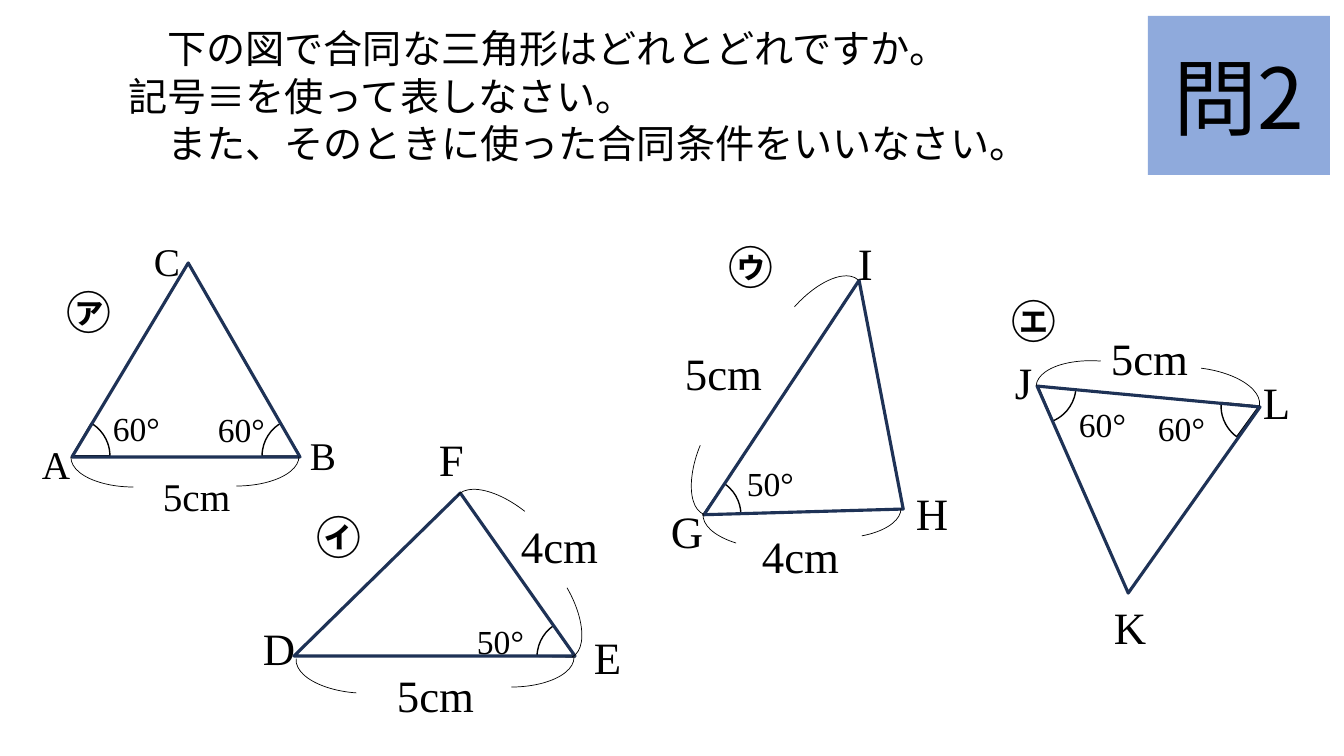
from lxml import etree
from pptx import Presentation
from pptx.dml.color import RGBColor
from pptx.enum.shapes import MSO_SHAPE
from pptx.enum.text import MSO_ANCHOR, MSO_AUTO_SIZE, PP_ALIGN
from pptx.oxml.ns import qn
from pptx.util import Emu, Pt

RECTANGLE = MSO_SHAPE.RECTANGLE
TRIANGLE = MSO_SHAPE.ISOSCELES_TRIANGLE
ARC = MSO_SHAPE.ARC
PIE = MSO_SHAPE.PIE
MIDDLE = MSO_ANCHOR.MIDDLE
LEFT = PP_ALIGN.LEFT
CENTER = PP_ALIGN.CENTER
FIT_TEXT = MSO_AUTO_SIZE.SHAPE_TO_FIT_TEXT

COLORS = {"text": "000000", "badge": "8FAADC", "side": "1E3256", "paper": "FFFFFF"}
SERIF = "Times New Roman"
GOTHIC = "Noto Sans CJK JP"
EMU_PER_PX = 914400 / 100.8
ANGLE_RADIUS = 38
LABEL_HEIGHTS = {24: 50, 28: 57, 32: 65}
FIRST_QUARTER = (180, 270.6)
SECOND_QUARTER = (270, 360)

QUESTION = [
    "　下の図で合同な三角形はどれとどれですか。",
    "記号≡を使って表しなさい。",
    "　また、そのときに使った合同条件をいいなさい。　",
]

FIGURES = [
    {
        "triangle": (294, 493, 281, 163, 0, 0.592),
        "angles": [(575, 657, 220, 321.1, 15.2)],
        "arcs": [
            (477, 472, 308.4, SECOND_QUARTER),
            (512, 540, 150, FIRST_QUARTER),
            (329, 601, 273.9, FIRST_QUARTER),
            (482, 595, 90, SECOND_QUARTER),
        ],
        "labels": [
            ("4cm", 511, 514, 118, 32), ("5cm", 387, 663, 118, 32),
            ("50°", 467, 616, 89, 24), ("D", 253, 616, 28, 32),
            ("E", 584, 625, 28, 32), ("F", 429, 427, 28, 32),
        ],
    },
    {
        "triangle": (709, 361, 281, 163, 123.5, 0.592),
        "angles": [(703, 515, 344.8, 319.8, 13.3)],
        "arcs": [
            (698, 394, 202.4, SECOND_QUARTER),
            (787, 264, 41.6, FIRST_QUARTER),
            (736, 456, 273.9, (226.2, 270.6)),
            (809, 446, 90, (270, 319.6)),
        ],
        "labels": [
            ("4cm", 752, 524, 118, 32), ("5cm", 675, 341, 118, 32),
            ("50°", 737, 458, 80, 24), ("I", 848, 231, 28, 32),
            ("G", 661, 499, 28, 32), ("H", 906, 481, 28, 32),
        ],
    },
    {
        "triangle": (72, 263, 228, 194, 0, 0.51),
        "angles": [(300, 456, 220, 320, 19.3), (72, 456, 340.5, 320, 19.3)],
        "arcs": [
            (104, 395, 270, FIRST_QUARTER),
            (207, 394, 90, SECOND_QUARTER),
        ],
        "labels": [
            ("A", 32, 435, 35, 28), ("B", 300, 426, 35, 28),
            ("C", 144, 232, 35, 28), ("5cm", 153, 467, 119, 28),
            ("60°", 103, 403, 85, 24), ("60°", 208, 404, 85, 24),
        ],
    },
    {
        "triangle": (1001, 347, 228, 194, 305.3, 0.51),
        "angles": [(1038, 386, 47.6, 318, 19.3), (1259, 406, 166, 320, 19.3)],
        "arcs": [
            (1069, 328, 274.4, SECOND_QUARTER),
            (1168, 335, 97, FIRST_QUARTER),
        ],
        "labels": [
            ("L", 1253, 370, 35, 32), ("K", 1104, 595, 35, 32),
            ("J", 1005, 350, 35, 32), ("5cm", 1101, 326, 119, 32),
            ("60°", 1069, 399, 83, 24), ("60°", 1148, 403, 78, 24),
        ],
    },
]

FIGURE_MARKS = [("㋐", 57, 280), ("㋑", 307, 505), ("㋒", 719, 235), ("㋓", 1002, 289)]


def px(*lengths):
    return [Emu(round(length * EMU_PER_PX)) for length in lengths]


def color(name):
    return RGBColor.from_string(COLORS[name])


def set_font(paragraph, size, name=SERIF, bold=False):
    font = paragraph.font
    font.size = Pt(size)
    font.bold = bold
    font.color.rgb = color("text")
    font.name = name
    properties = paragraph._p.pPr.find(qn("a:defRPr"))
    east_asian = etree.SubElement(properties, qn("a:ea"))
    east_asian.set("typeface", GOTHIC)


def add_outline(shapes, kind, box, rotation=0, fill=None, line=None, width=1):
    shape = shapes.add_shape(kind, *px(*box))
    shape.shadow.inherit = False
    shape.rotation = rotation
    if fill:
        shape.fill.solid()
        shape.fill.fore_color.rgb = color(fill)
    else:
        shape.fill.background()
    if line:
        shape.line.color.rgb = color(line)
        shape.line.width = Pt(width)
    else:
        shape.line.fill.background()
    return shape


def set_sweep(shape, start, end):
    for index, degrees in enumerate((start, end % 360)):
        shape.adjustments[index] = degrees * 0.6


def add_label(shapes, text, left, top, width, size, name=SERIF, bold=False):
    box = shapes.add_textbox(*px(left, top, width, LABEL_HEIGHTS[size]))
    frame = box.text_frame
    frame.word_wrap = True
    frame.auto_size = FIT_TEXT
    frame.text = text
    set_font(frame.paragraphs[0], size, name, bold)


def add_figure(slide, figure):
    shapes = slide.shapes.add_group_shape().shapes
    for x, y, rotation, start, end in figure["angles"]:
        box = (x - ANGLE_RADIUS, y - ANGLE_RADIUS, 2 * ANGLE_RADIUS, 2 * ANGLE_RADIUS)
        set_sweep(add_outline(shapes, PIE, box, rotation, "paper", "text"), start, end)
    *box, rotation, apex = figure["triangle"]
    triangle = add_outline(shapes, TRIANGLE, box, rotation, None, "side", 2.25)
    triangle.adjustments[0] = apex
    for left, top, rotation, sweep in figure["arcs"]:
        arc = add_outline(shapes, ARC, (left, top, 59, 125), rotation, None, "text", 0.5)
        set_sweep(arc, *sweep)
    for label in figure["labels"]:
        add_label(shapes, *label)


def add_question(slide):
    title = slide.shapes.title
    title.left, title.top, title.width, title.height = px(118, 43, 909, 152)
    frame = title.text_frame
    frame.word_wrap = True
    frame.auto_size = MSO_AUTO_SIZE.NONE
    frame.vertical_anchor = MIDDLE
    frame.text = "\n".join(QUESTION)
    for paragraph in frame.paragraphs:
        paragraph.alignment = LEFT
        paragraph.line_spacing = Pt(34)
        set_font(paragraph, 28)


def add_badge(slide):
    badge = add_outline(slide.shapes, RECTANGLE, (1148, 16, 182, 159), fill="badge")
    frame = badge.text_frame
    frame.word_wrap = False
    frame.vertical_anchor = MIDDLE
    frame.text = "問2"
    frame.paragraphs[0].alignment = CENTER
    set_font(frame.paragraphs[0], 60, GOTHIC)


def main():
    presentation = Presentation()
    presentation.slide_width, presentation.slide_height = px(1344, 756)
    slide = presentation.slides.add_slide(presentation.slide_layouts[5])
    add_question(slide)
    add_badge(slide)
    for figure in FIGURES:
        add_figure(slide, figure)
    for text, left, top in FIGURE_MARKS:
        add_label(slide.shapes, text, left, top, 57, 32, GOTHIC, True)
    presentation.save("out.pptx")


if __name__ == "__main__":
    main()
